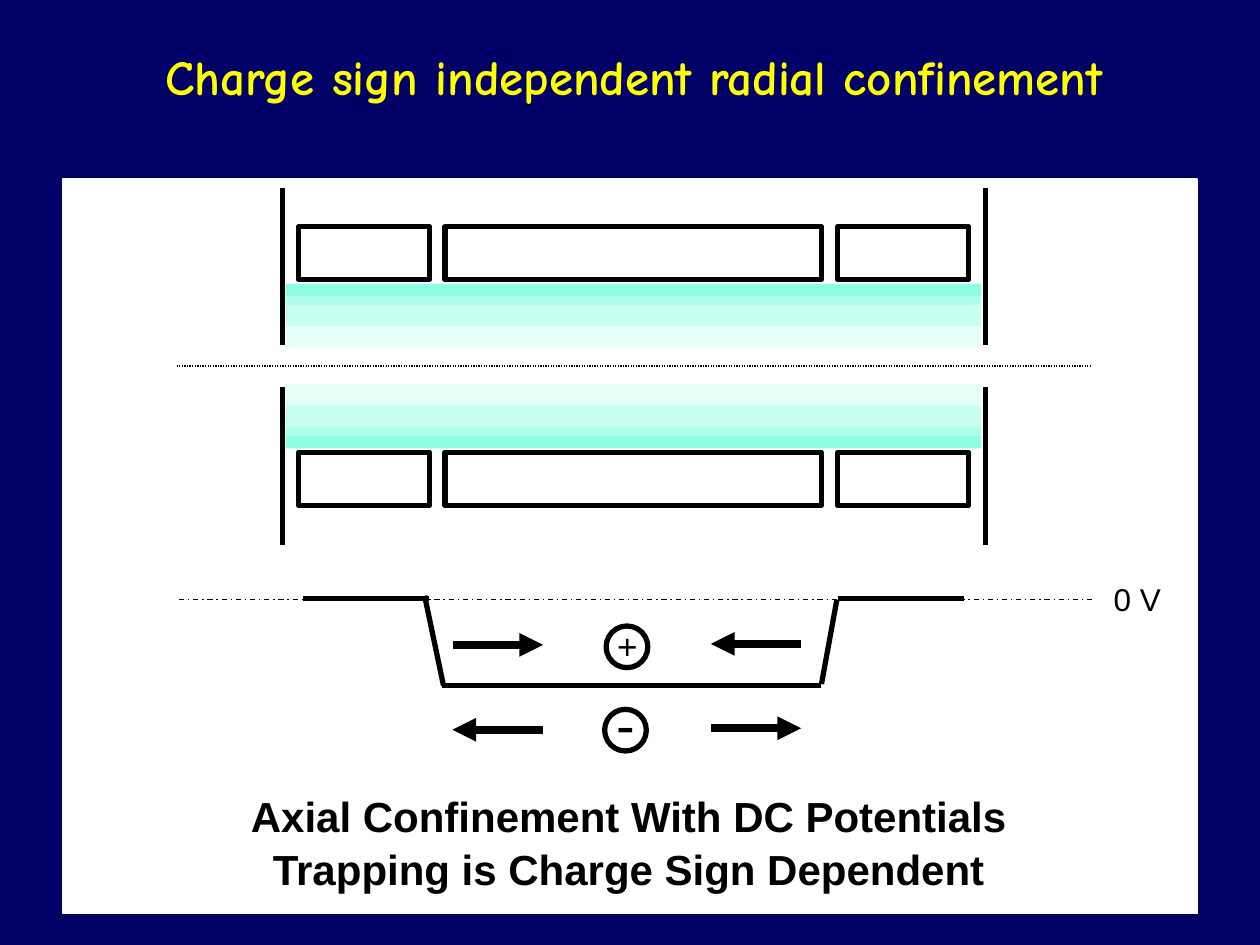
from lxml import etree
from pptx import Presentation
from pptx.dml.color import RGBColor
from pptx.enum.dml import MSO_LINE
from pptx.enum.shapes import MSO_CONNECTOR, MSO_SHAPE
from pptx.enum.text import MSO_AUTO_SIZE, PP_ALIGN
from pptx.oxml.ns import qn
from pptx.util import Cm, Pt

NAVY = RGBColor(0x00, 0x00, 0x66)
WHITE = RGBColor(0xFF, 0xFF, 0xFF)
BLACK = RGBColor(0x00, 0x00, 0x00)
YELLOW = RGBColor(0xFF, 0xFF, 0x00)
MINT = RGBColor(0xB5, 0xFF, 0xEC)
MID_MINT = RGBColor(0xAD, 0xFF, 0xEA)
DEEP_MINT = RGBColor(0x8F, 0xFF, 0xE2)

# All lengths below are in centimetres.
TITLE = "Charge sign independent radial confinement"
CAPTION = ["Axial Confinement With DC Potentials",
           "Trapping is Charge Sign Dependent"]
PANEL = (1.27, 3.61, 22.86, 14.81)

# Upper half of the trap; the lower half is its reflection in the axis.
AXIS_Y = 7.38
ELECTRODE_TOP, ELECTRODE_HEIGHT = 4.57, 1.07
ELECTRODES = [(6.02, 2.64), (16.89, 2.64), (8.97, 7.59)]  # left, width
END_CAPS_X = [5.69, 19.86]
END_CAP_TOP, END_CAP_BOTTOM = 3.78, 6.96
FIELD_LEFT, FIELD_WIDTH = 5.76, 14.02
FIELD_BANDS = [  # top, height, colour, opacity in %
    (5.74, 1.27, MINT, 36),
    (5.77, 0.81, MINT, 57),
    (5.77, 0.38, MID_MINT, 91),
    (5.72, 0.25, DEEP_MINT, 100),
]

# Lines are x1, y1, x2, y2.
ZERO_LEVEL = (3.61, 12.09, 22.02, 12.09)
POTENTIAL_WELL = [
    (6.1, 12.07, 8.64, 12.07),
    (8.92, 13.82, 16.56, 13.82),
    (16.89, 12.07, 19.43, 12.07),
    (8.56, 12.01, 8.94, 13.82),
    (16.56, 13.79, 16.87, 12.09),
]
FORCES = [
    (16.15, 12.98, 14.33, 12.98),
    (9.14, 13.0, 10.95, 13.0),
    (14.33, 14.68, 16.15, 14.68),
    (10.95, 14.71, 9.12, 14.71),
]
ION_SIZE = 0.84
IONS = [  # sign, circle corner, label box, text size
    ("+", (12.22, 12.62), (12.19, 12.47, 0.91, 1.09), 20),
    ("-", (12.19, 14.3), (12.17, 13.77, 0.89, 1.6), 32),
]


def add_box(shapes, box, fill=None, outline=None, width=3, opacity=100,
            kind=MSO_SHAPE.RECTANGLE):
    shape = shapes.add_shape(kind, *map(Cm, box))
    shape.shadow.inherit = False
    if fill is None:
        shape.fill.background()
    else:
        shape.fill.solid()
        shape.fill.fore_color.rgb = fill
        if opacity < 100:
            color = shape.fill._xPr.find(".//" + qn("a:srgbClr"))
            etree.SubElement(color, qn("a:alpha"), val=str(opacity * 1000))
    if outline is None:
        shape.line.fill.background()
    else:
        shape.line.color.rgb = outline
        shape.line.width = Pt(width)


def add_line(shapes, ends, width=3, dash=None, arrow=False):
    line = shapes.add_connector(MSO_CONNECTOR.STRAIGHT, *map(Cm, ends))
    line.line.color.rgb = BLACK
    line.line.width = Pt(width)
    if dash:
        line.line.dash_style = dash
    if arrow:
        etree.SubElement(line.line._get_or_add_ln(), qn("a:tailEnd"),
                         type="triangle")
    etree.SubElement(line._element.spPr, qn("a:effectLst"))


def add_text(shapes, box, lines, size, font="Arial", color=BLACK, bold=False,
             align=PP_ALIGN.LEFT, spacing=1.0):
    frame = shapes.add_textbox(*map(Cm, box)).text_frame
    frame.word_wrap = False
    frame.auto_size = MSO_AUTO_SIZE.SHAPE_TO_FIT_TEXT
    frame.text = "\n".join(lines)
    for paragraph in frame.paragraphs:
        paragraph.alignment = align
        paragraph.line_spacing = spacing
        for run in paragraph.runs:
            run.font.name = font
            run.font.size = Pt(size)
            run.font.bold = bold
            run.font.color.rgb = color


def reflect(top, height):
    """Top of a part after reflection in the trap axis."""
    return 2 * AXIS_Y - top - height


def add_trap(shapes):
    add_line(shapes, (3.56, AXIS_Y, 21.97, AXIS_Y), 0.75,
             MSO_LINE.ROUND_DOT)
    cap_height = END_CAP_BOTTOM - END_CAP_TOP
    for mirrored in (False, True):
        def place(top, height):
            return reflect(top, height) if mirrored else top

        electrode_y = place(ELECTRODE_TOP, ELECTRODE_HEIGHT)
        for left, width in ELECTRODES:
            add_box(shapes, (left, electrode_y, width, ELECTRODE_HEIGHT),
                    outline=BLACK)
        cap_y = place(END_CAP_TOP, cap_height)
        for x in END_CAPS_X:
            add_line(shapes, (x, cap_y, x, cap_y + cap_height))
        for top, height, color, opacity in FIELD_BANDS:
            add_box(shapes,
                    (FIELD_LEFT, place(top, height), FIELD_WIDTH, height),
                    fill=color, opacity=opacity)


def add_potential(shapes):
    add_line(shapes, ZERO_LEVEL, 0.75, MSO_LINE.DASH_DOT)
    add_text(shapes, (22.2, 11.56, 1.47, 1.02), ["0 V"], 18)
    for ends in POTENTIAL_WELL:
        add_line(shapes, ends)
    for sign, corner, label_box, size in IONS:
        add_box(shapes, (*corner, ION_SIZE, ION_SIZE), outline=BLACK,
                kind=MSO_SHAPE.OVAL)
        add_text(shapes, label_box, [sign], size)
    for ends in FORCES:
        add_line(shapes, ends, 4.5, arrow=True)


def main():
    deck = Presentation()
    deck.slide_width, deck.slide_height = Cm(25.4), Cm(19.05)
    slide = deck.slides.add_slide(deck.slide_layouts[6])
    slide.background.fill.solid()
    slide.background.fill.fore_color.rgb = NAVY
    shapes = slide.shapes

    add_box(shapes, PANEL, fill=WHITE, outline=WHITE, width=0.75)
    add_text(shapes, (1.92, 0.81, 21.72, 1.45), [TITLE], 28, "Comic Neue",
             YELLOW, True, PP_ALIGN.CENTER)
    add_trap(shapes)
    add_potential(shapes)
    add_text(shapes, (4.04, 15.77, 17.27, 2.64), CAPTION, 24, bold=True,
             align=PP_ALIGN.CENTER, spacing=1.05)
    deck.save("out.pptx")


if __name__ == "__main__":
    main()
